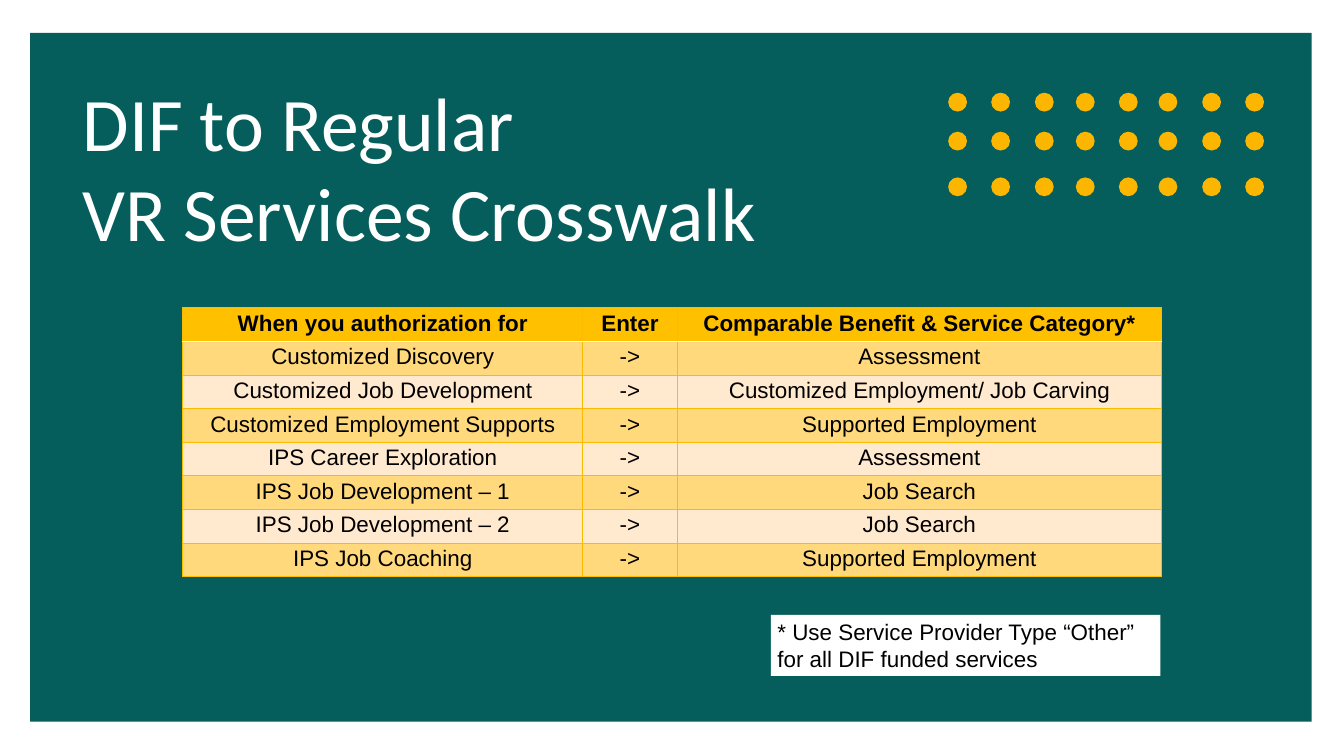
from dataclasses import dataclass
from itertools import product

from lxml.etree import SubElement
from pptx import Presentation
from pptx.dml.color import RGBColor
from pptx.enum.shapes import MSO_SHAPE as Shape
from pptx.enum.text import MSO_ANCHOR as Anchor, MSO_AUTO_SIZE as AutoSize, PP_ALIGN as Align
from pptx.oxml.ns import qn
from pptx.util import Inches, Pt


@dataclass(frozen=True)
class Theme:
    """Colours, fonts and type sizes of the deck."""
    panel: str = "055E5C"
    dot: str = "FDB600"
    header: str = "FFC000"
    dark_row: str = "FFD97C"
    light_row: str = "FFE9CF"
    grid: str = "F9BC00"
    white: str = "FFFFFF"
    ink: str = "000000"
    title_font: str = "Calibri"
    body_font: str = "Arial"
    title_size: int = 81
    body_size: int = 24


class SlideBuilder:
    """Draws styled elements on the current slide."""

    def __init__(self, page, theme):
        self.page = page
        self.theme = theme

    def format_text(self, frame, font, size, color, align=Align.LEFT, bold=False):
        """Style every paragraph and run in a text frame."""
        for para in frame.paragraphs:
            para.alignment = align
            for span in para.runs:
                span.font.name = font
                span.font.size = Pt(size)
                span.font.bold = bold
                span.font.color.rgb = RGBColor.from_string(color)

    def shape(self, kind, left, top, width, height, color):
        """Add a filled shape without line or shadow."""
        box = self.page.shapes.add_shape(
            kind, Inches(left), Inches(top), Inches(width), Inches(height))
        box.shadow.inherit = False
        box.fill.solid()
        box.fill.fore_color.rgb = RGBColor.from_string(color)
        box.line.fill.background()
        return box

    def title(self, text, left, top, width, height, backdrop):
        """Place the title in front of its backdrop."""
        box = self.page.shapes.title
        box.left, box.top = Inches(left), Inches(top)
        box.width, box.height = Inches(width), Inches(height)
        frame = box.text_frame
        frame.text = text
        frame.word_wrap = True
        frame.auto_size = AutoSize.NONE
        frame.vertical_anchor = Anchor.MIDDLE
        self.format_text(frame, self.theme.title_font, self.theme.title_size, self.theme.white)
        backdrop.element.addnext(box.element)

    def dots(self, lefts, tops, size):
        """Add a dot at every crossing of the given columns and rows."""
        for top, left in product(tops, lefts):
            self.shape(Shape.OVAL, left, top, size, size, self.theme.dot)

    def note(self, text, left, top, width, height):
        """Add a white note box."""
        box = self.shape(Shape.RECTANGLE, left, top, width, height, self.theme.white)
        frame = box.text_frame
        frame.text = text
        frame.word_wrap = True
        frame.vertical_anchor = Anchor.TOP
        self.format_text(frame, self.theme.body_font, self.theme.body_size, self.theme.ink)

    def borders(self, cell, **sides):
        """Draw cell borders given as side=(colour, points)."""
        properties = cell._tc.get_or_add_tcPr()
        for index, (side, (color, width)) in enumerate(sides.items()):
            line = SubElement(properties, qn(f"a:ln{side}"), w=str(Pt(width)))
            fill = SubElement(line, qn("a:solidFill"))
            SubElement(fill, qn("a:srgbClr"), val=color)
            properties.insert(index, line)

    def table(self, rows, left, top, widths, row_height):
        """Add a table with a header and alternating rows."""
        theme = self.theme
        table = self.page.shapes.add_table(
            len(rows), len(widths), Inches(left), Inches(top),
            Inches(sum(widths)), Inches(row_height * len(rows))).table
        for column, width in zip(table.columns, widths):
            column.width = Inches(width)
        grid, rule = (theme.grid, 0.75), (theme.white, 2)
        for number, values in enumerate(rows):
            is_header = number == 0
            stripe = theme.dark_row if number % 2 else theme.light_row
            for column, value in enumerate(values):
                cell = table.cell(number, column)
                cell.text_frame.text = value
                self.format_text(cell.text_frame, theme.body_font, theme.body_size,
                                 theme.ink, Align.CENTER, is_header)
                cell.fill.solid()
                cell.fill.fore_color.rgb = RGBColor.from_string(
                    theme.header if is_header else stripe)
                self.borders(cell, L=grid, R=grid, T=rule if number == 1 else grid,
                             B=rule if is_header else grid)


def main():
    """Build and save the crosswalk slide."""
    deck = Presentation()
    deck.slide_width, deck.slide_height = Inches(20), Inches(11.25)
    page = deck.slides.add_slide(deck.slide_layouts[5])
    theme = Theme()
    builder = SlideBuilder(page, theme)

    panel = builder.shape(Shape.RECTANGLE, 0.45, 0.49, 19.07, 10.25, theme.panel)
    builder.title("DIF to Regular\nVR Services Crosswalk", 1.13, 1.85, 16.95, 1.25, panel)
    builder.dots([14.11, 14.75, 15.4, 16.01, 16.65, 17.24, 17.89, 18.53],
                 [1.38, 1.96, 2.64], 0.28)

    services = [
        ("Customized Discovery", "Assessment"),
        ("Customized Job Development", "Customized Employment/ Job Carving"),
        ("Customized Employment Supports", "Supported Employment"),
        ("IPS Career Exploration", "Assessment"),
        ("IPS Job Development – 1", "Job Search"),
        ("IPS Job Development – 2", "Job Search"),
        ("IPS Job Coaching", "Supported Employment"),
    ]
    header = ("When you authorization for", "Enter", "Comparable Benefit & Service Category*")
    rows = [header] + [(service, "->", category) for service, category in services]
    builder.table(rows, 2.72, 4.58, [5.95, 1.41, 7.2], 0.5)
    builder.note("* Use Service Provider Type “Other” for all DIF funded services",
                 11.47, 9.15, 5.8, 0.91)
    deck.save("out.pptx")


if __name__ == "__main__":
    main()
